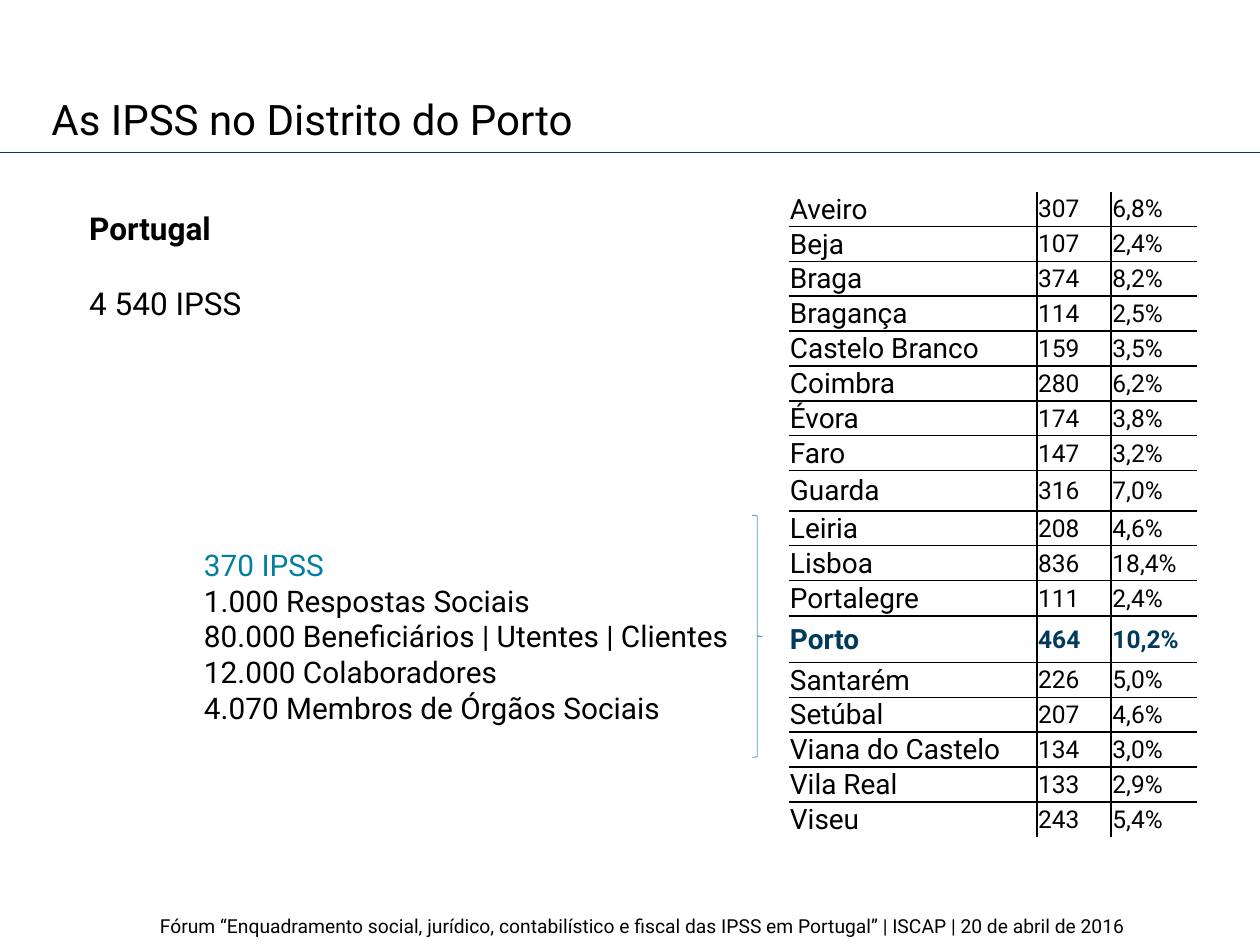
from lxml import etree
from pptx import Presentation
from pptx.dml.color import RGBColor
from pptx.enum.shapes import MSO_CONNECTOR, MSO_SHAPE
from pptx.enum.text import MSO_ANCHOR
from pptx.oxml.ns import qn
from pptx.util import Inches, Pt

STRAIGHT = MSO_CONNECTOR.STRAIGHT
RIGHT_BRACE = MSO_SHAPE.RIGHT_BRACE
MIDDLE = MSO_ANCHOR.MIDDLE

FONT = "Roboto"
BLACK = "000000"
WHITE = "FFFFFF"
NAVY = "003B5E"
TEAL = "007FA3"
BLUE = "5B9BD5"

HIGHLIGHT = "Porto"
ROW_HEIGHT = 0.25
TALL_ROWS = {"Guarda": 0.32, "Lisboa": 0.27, "Portalegre": 0.28, "Porto": 0.37}
COLUMN_WIDTHS = (1.97, 0.59, 0.68)
COLUMN_SIZES = (16, 14, 14)
DISTRICTS = [
    ("Aveiro", "307", "6,8%"),
    ("Beja", "107", "2,4%"),
    ("Braga", "374", "8,2%"),
    ("Bragança", "114", "2,5%"),
    ("Castelo Branco", "159", "3,5%"),
    ("Coimbra", "280", "6,2%"),
    ("Évora", "174", "3,8%"),
    ("Faro", "147", "3,2%"),
    ("Guarda", "316", "7,0%"),
    ("Leiria", "208", "4,6%"),
    ("Lisboa", "836", "18,4%"),
    ("Portalegre", "111", "2,4%"),
    ("Porto", "464", "10,2%"),
    ("Santarém", "226", "5,0%"),
    ("Setúbal", "207", "4,6%"),
    ("Viana do Castelo", "134", "3,0%"),
    ("Vila Real", "133", "2,9%"),
    ("Viseu", "243", "5,4%"),
]


def color(value):
    """Return the colour for a hex string."""
    return RGBColor.from_string(value)


def add_run(paragraph, text, size, hex_color=BLACK, bold=False):
    """Add one formatted run to a paragraph."""
    run = paragraph.add_run()
    run.text = text
    run.font.name = FONT
    run.font.size = Pt(size)
    run.font.bold = bold
    run.font.color.rgb = color(hex_color)


def add_text(slide, box, lines, size, wrap=True, gap=0):
    """Add a text box with one paragraph per (text, colour, bold) line."""
    frame = slide.shapes.add_textbox(*map(Inches, box)).text_frame
    frame.word_wrap = wrap
    for index, line in enumerate(lines):
        paragraph = frame.add_paragraph() if index else frame.paragraphs[0]
        if index and gap:
            paragraph.space_before = Pt(gap)
        text, hex_color, bold = line
        add_run(paragraph, text, size, hex_color, bold)


def add_rule(slide, top):
    """Draw the thin line across the slide under the title."""
    rule = slide.shapes.add_connector(
        STRAIGHT, Inches(0), Inches(top), Inches(10), Inches(top))
    rule.line.color.rgb = color(NAVY)
    rule.line.width = Pt(0.5)
    etree.SubElement(rule._element.spPr, qn("a:effectLst"))


def add_brace(slide, box):
    """Draw the brace that ties the figures to the table."""
    brace = slide.shapes.add_shape(RIGHT_BRACE, *map(Inches, box))
    brace.shadow.inherit = False
    brace.fill.background()
    brace.line.color.rgb = color(BLUE)
    brace.line.width = Pt(0.5)


def set_borders(cell, sides):
    """Draw black borders on the visible sides of a cell and clear the others."""
    properties = cell._tc.get_or_add_tcPr()
    for side, visible in sides.items():
        border = etree.SubElement(properties, qn(f"a:ln{side}"), w=str(Pt(1)))
        if visible:
            fill = etree.SubElement(border, qn("a:solidFill"))
            etree.SubElement(fill, qn("a:srgbClr"), val=BLACK)
        else:
            etree.SubElement(border, qn("a:noFill"))


def fill_cell(cell, text, size, highlighted):
    """Set the text, margins and background of a cell."""
    cell.fill.solid()
    cell.fill.fore_color.rgb = color(WHITE)
    cell.vertical_anchor = MIDDLE
    cell.margin_left = cell.margin_top = cell.margin_right = Inches(0.01)
    cell.margin_bottom = Inches(0)
    add_run(cell.text_frame.paragraphs[0], text, size,
            NAVY if highlighted else BLACK, highlighted)


def add_district_table(slide, box):
    """Add the table of institutions by district, with inner borders only."""
    last_row, last_column = len(DISTRICTS) - 1, len(COLUMN_WIDTHS) - 1
    table = slide.shapes.add_table(
        last_row + 1, last_column + 1, *map(Inches, box)).table
    table.first_row = table.horz_banding = False
    for column, width in zip(table.columns, COLUMN_WIDTHS):
        column.width = Inches(width)
    for row, district in enumerate(DISTRICTS):
        name = district[0]
        table.rows[row].height = Inches(TALL_ROWS.get(name, ROW_HEIGHT))
        for column, text in enumerate(district):
            cell = table.cell(row, column)
            set_borders(cell, {"L": column > 0, "R": column < last_column,
                               "T": row > 0, "B": row < last_row})
            fill_cell(cell, text, COLUMN_SIZES[column], name == HIGHLIGHT)


def main():
    """Build and save the slide."""
    presentation = Presentation()
    presentation.slide_width = Inches(10)
    presentation.slide_height = Inches(7.5)
    slide = presentation.slides.add_slide(presentation.slide_layouts[6])
    add_text(slide, (1.17, 7.21, 9.62, 0.29), [
        ("Fórum “Enquadramento social, jurídico, contabilístico e fiscal das "
         "IPSS em Portugal” | ISCAP | 20 de abril de 2016", BLACK, False)], 11)
    add_rule(slide, 1.21)
    add_text(slide, (0.31, 0.69, 4.39, 0.5),
             [("As IPSS no Distrito do Porto", BLACK, False)], 24, wrap=False)
    add_text(slide, (1.52, 4.29, 4.45, 1.53), [
        ("370 IPSS", TEAL, False),
        ("1.000 Respostas Sociais", BLACK, False),
        ("80.000 Beneficiários | Utentes | Clientes", BLACK, False),
        ("12.000 Colaboradores", BLACK, False),
        ("4.070 Membros de Órgãos Sociais", BLACK, False)], 17)
    add_text(slide, (0.61, 1.61, 1.5, 1.31), [
        ("Portugal", BLACK, True), ("4 540 IPSS", BLACK, False)], 18, gap=21)
    add_district_table(slide, (6.26, 1.52, 3.24, 5.07))
    add_brace(slide, (5.97, 4.09, 0.08, 1.92))
    presentation.save("out.pptx")


if __name__ == "__main__":
    main()
